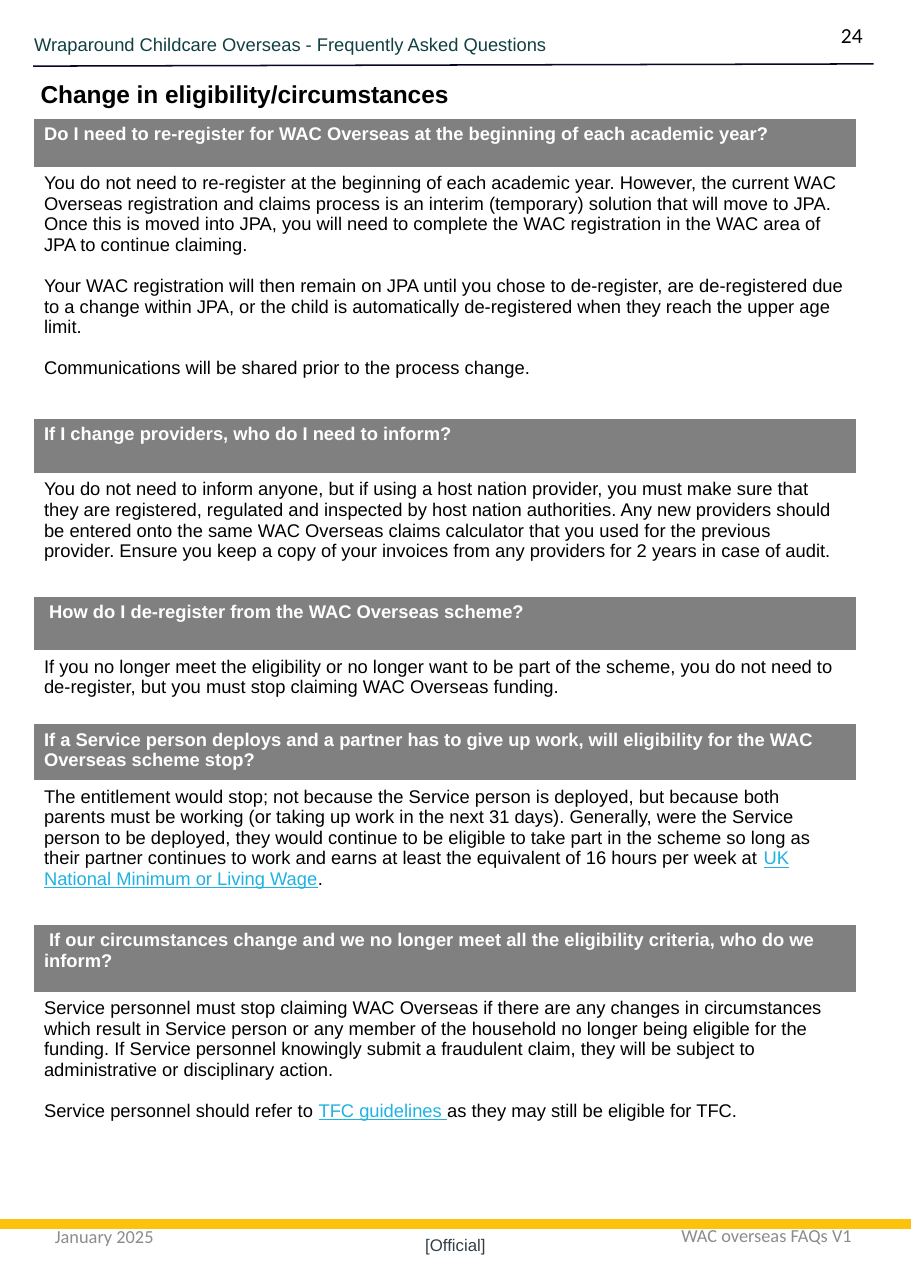
from lxml.etree import SubElement
from pptx import Presentation
from pptx.dml.color import RGBColor
from pptx.enum.shapes import MSO_CONNECTOR
from pptx.enum.text import MSO_ANCHOR, PP_ALIGN
from pptx.oxml.ns import qn
from pptx.util import Inches, Pt

HUES = {
    "teal": "114042", "navy": "060625", "band": "808080", "white": "FFFFFF",
    "black": "000000", "link": "1EB2E3", "pale": "8C8C8C", "gold": "FDC20B",
    "slate": "333F47",
}

# Each entry: question, question height, answer height, answer paragraphs.
# A paragraph is a list of runs; every second run is a link.
FAQS = [
    ("Do I need to re-register for WAC Overseas at the beginning of each academic year?",
     0.45, 2.28,
     [["You do not need to re-register at the beginning of each academic year. However, "
       "the current WAC Overseas registration and claims process is an interim (temporary) "
       "solution that will move to JPA. Once this is moved into JPA, you will need to "
       "complete the WAC registration in the WAC area of JPA to continue claiming."],
      ["Your WAC registration will then remain on JPA until you chose to de-register, are "
       "de-registered due to a change within JPA, or the child is automatically "
       "de-registered when they reach the upper age limit."],
      ["Communications will be shared prior to the process change."]]),
    ("If I change providers, who do I need to inform?", 0.5, 1.11,
     [["You do not need to inform anyone, but if using a host nation provider, you must "
       "make sure that they are registered, regulated and inspected by host nation "
       "authorities. Any new providers should be entered onto the same WAC Overseas claims "
       "calculator that you used for the previous provider. Ensure you keep a copy of your "
       "invoices from any providers for 2 years in case of audit."]]),
    (" How do I de-register from the WAC Overseas scheme?", 0.5, 0.66,
     [["If you no longer meet the eligibility or no longer want to be part of the scheme, "
       "you do not need to de-register, but you must stop claiming WAC Overseas funding."]]),
    ("If a Service person deploys and a partner has to give up work, will eligibility for "
     "the WAC Overseas scheme stop?", 0.52, 1.3,
     [["The entitlement would stop; not because the Service person is deployed, but because "
       "both parents must be working (or taking up work in the next 31 days). Generally, "
       "were the Service person to be deployed, they would continue to be eligible to take "
       "part in the scheme so long as their partner continues to work and earns at least "
       "the equivalent of 16 hours per week at ",
       "UK National Minimum or Living Wage", "."]]),
    (" If our circumstances change and we no longer meet all the eligibility criteria, who "
     "do we inform?", 0.62, 1.3,
     [["Service personnel must stop claiming WAC Overseas if there are any changes in "
       "circumstances which result in Service person or any member of the household no "
       "longer being eligible for the funding. If Service personnel knowingly submit a "
       "fraudulent claim, they will be subject to administrative or disciplinary action."],
      ["Service personnel should refer to ", "TFC guidelines ",
       "as they may still be eligible for TFC."]]),
]


def tint(name):
    return RGBColor.from_string(HUES[name])


def put_run(para, text, size=12, font="Arial", hue="black", bold=False, line=False):
    run = para.add_run()
    run.text = text
    run.font.size = Pt(size)
    run.font.name = font
    run.font.bold = bold
    run.font.underline = line
    run.font.color.rgb = tint(hue)


def add_text(slide, text, box, align=PP_ALIGN.LEFT, anchor=MSO_ANCHOR.TOP,
             inset=True, **style):
    frame = slide.shapes.add_textbox(*map(Inches, box)).text_frame
    frame.word_wrap = True
    frame.vertical_anchor = anchor
    if not inset:
        frame.margin_left = frame.margin_right = 0
        frame.margin_top = frame.margin_bottom = 0
    para = frame.paragraphs[0]
    para.alignment = align
    put_run(para, text, **style)


def add_rule(slide, start, end, hue, width):
    rule = slide.shapes.add_connector(
        MSO_CONNECTOR.STRAIGHT, *map(Inches, start + end))
    rule.line.color.rgb = tint(hue)
    rule.line.width = Pt(width)
    SubElement(rule._element.spPr, qn("a:effectLst"))


def fill_cell(cell, paras, fill, **style):
    cell.fill.solid()
    cell.fill.fore_color.rgb = tint(fill)
    frame = cell.text_frame
    for i, runs in enumerate(paras):
        para = frame.add_paragraph() if i else frame.paragraphs[0]
        if i:
            para.space_before = Pt(13.5)  # one line of space
        for j, text in enumerate(runs):
            look = {"hue": "link", "line": True} if j % 2 else style
            put_run(para, text, **look)


def add_faqs(slide, left, top, width):
    tall = [h for faq in FAQS for h in faq[1:3]]
    frame = slide.shapes.add_table(
        len(tall), 1, *map(Inches, (left, top, width, sum(tall))))
    table = frame.table
    table.first_row = table.horz_banding = False
    for row, height in zip(table.rows, tall):
        row.height = Inches(height)
    for i, (ask, _, _, reply) in enumerate(FAQS):
        fill_cell(table.cell(2 * i, 0), [[ask]], "band", hue="white", bold=True)
        fill_cell(table.cell(2 * i + 1, 0), reply, "white")


def main():
    deck = Presentation()
    deck.slide_width, deck.slide_height = Inches(8.27), Inches(11.69)
    slide = deck.slides.add_slide(deck.slide_layouts[6])

    # Page header
    add_text(slide, "Wraparound Childcare Overseas - Frequently Asked Questions",
             (0.31, 0.3, 5.69, 0.4), inset=False, hue="teal")
    add_rule(slide, (0.3, 0.6), (7.93, 0.58), "navy", 1)
    add_text(slide, "24", (7.27, 0.15, 0.66, 0.34), align=PP_ALIGN.RIGHT,
             size=14, font="Calibri")

    # Questions and answers
    add_faqs(slide, 0.3, 1.07, 7.48)
    add_text(slide, "Change in eligibility/circumstances", (0.27, 0.67, 5.06, 0.37),
             size=16, bold=True)

    # Page footer
    note = {"anchor": MSO_ANCHOR.MIDDLE, "font": "Calibri", "hue": "pale"}
    add_text(slide, "January 2025", (0.4, 10.91, 1.93, 0.62), **note)
    add_text(slide, "WAC overseas FAQs V1", (5.65, 10.9, 2.62, 0.62),
             align=PP_ALIGN.CENTER, **note)
    add_rule(slide, (0, 11.11), (8.27, 11.11), "gold", 6)
    add_text(slide, "[Official]", (0, 11.2, 8.27, 0.19), align=PP_ALIGN.CENTER,
             anchor=MSO_ANCHOR.BOTTOM, inset=False, size=11, hue="slate")

    deck.save("out.pptx")


if __name__ == "__main__":
    main()
